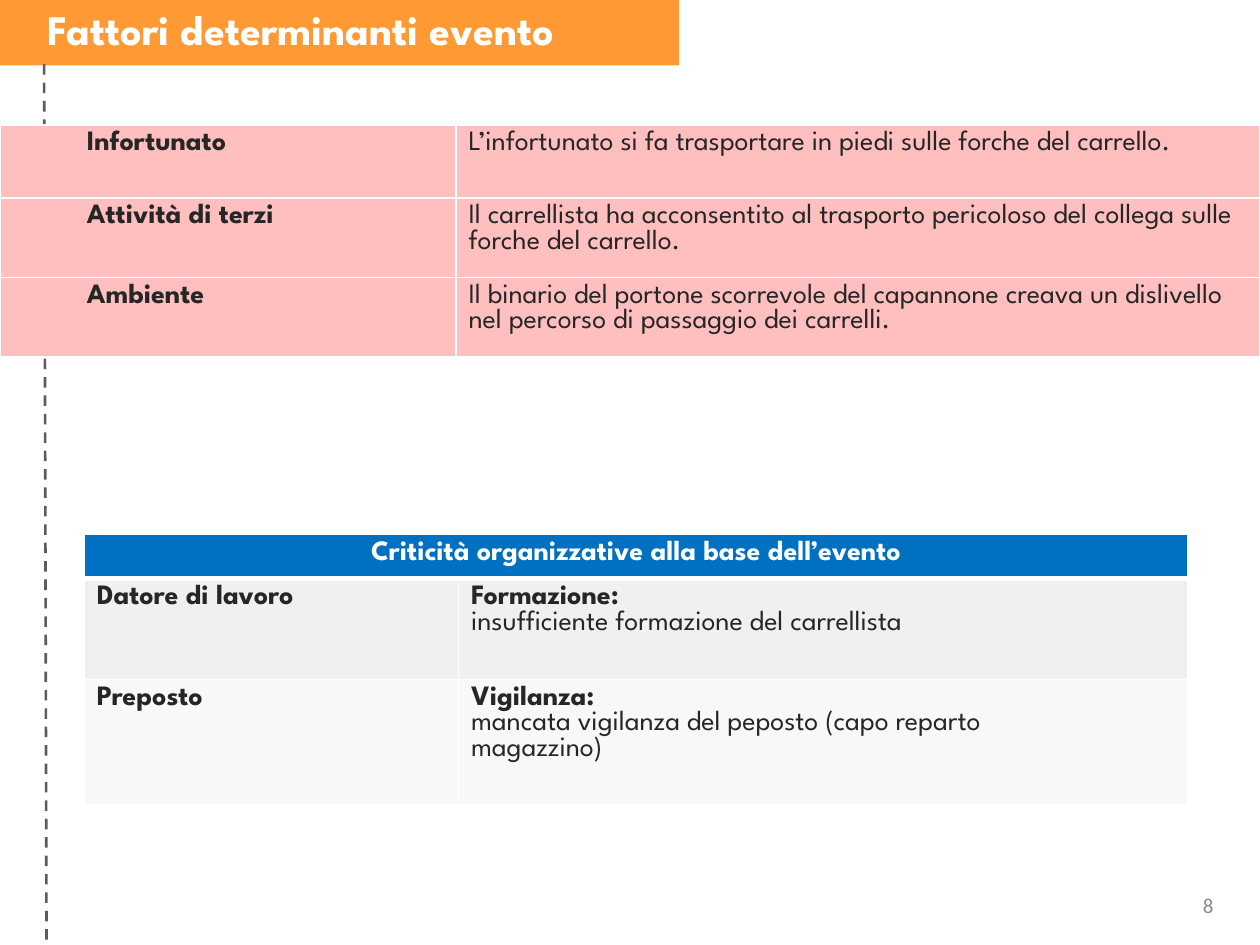
from dataclasses import dataclass

from lxml.etree import SubElement
from pptx import Presentation
from pptx.dml.color import RGBColor
from pptx.enum.dml import MSO_LINE
from pptx.enum.shapes import MSO_CONNECTOR, MSO_SHAPE
from pptx.enum.text import MSO_ANCHOR, MSO_AUTO_SIZE, PP_ALIGN
from pptx.oxml.ns import qn
from pptx.slide import Slide
from pptx.table import Table, _Cell
from pptx.util import Pt

WHITE = RGBColor(0xFF, 0xFF, 0xFF)
ORANGE = RGBColor(0xFF, 0x99, 0x33)
BLUE = RGBColor(0x00, 0x70, 0xC0)
PINK = RGBColor(0xFF, 0xBF, 0xBF)
LIGHT_GREY = RGBColor(0xF0, 0xF0, 0xF0)
PALE_GREY = RGBColor(0xF8, 0xF8, 0xF8)
DASH_GREY = RGBColor(0x5C, 0x5C, 0x5C)
NUMBER_GREY = RGBColor(0x89, 0x89, 0x89)
INK = RGBColor(0x26, 0x26, 0x26)
FONT = "League Spartan"


@dataclass
class Row:
    height: float
    label: str
    text: str
    fill: RGBColor
    heading: str = ""


FACTORS = [
    Row(41.8, "Infortunato",
        "L’infortunato si fa trasportare in piedi sulle forche del carrello.", PINK),
    Row(45.5, "Attività di terzi",
        "Il carrellista ha acconsentito al trasporto pericoloso del collega "
        "sulle forche del carrello.", PINK),
    Row(45.5, "Ambiente",
        "Il binario del portone scorrevole del capannone creava un dislivello "
        "nel percorso di passaggio dei carrelli.", PINK),
]
ISSUES = [
    Row(57.6, "Datore di lavoro", "insufficiente formazione del carrellista",
        LIGHT_GREY, "Formazione:"),
    Row(71.3, "Preposto",
        "mancata vigilanza del peposto (capo reparto\nmagazzino)",
        PALE_GREY, "Vigilanza:"),
]


def format_font(font, size: float, color: RGBColor, bold: bool = False,
                name: str = FONT) -> None:
    font.name, font.size, font.bold = name, Pt(size), bold
    font.color.rgb = color


def set_borders(cell: _Cell, bottom: float = 1, top: float = 1) -> None:
    tc_pr = cell._tc.get_or_add_tcPr()
    for side, width in (("L", 1), ("R", 1), ("T", top), ("B", bottom)):
        ln = SubElement(tc_pr, qn(f"a:ln{side}"), w=str(Pt(width)))
        fill = SubElement(ln, qn("a:solidFill"))
        SubElement(fill, qn("a:srgbClr"), val=str(WHITE))


def fill_cell(cell: _Cell, text: str, fill: RGBColor, bold_lines: int = 0,
              color: RGBColor = INK) -> None:
    """Write the text, with its first bold_lines paragraphs in bold."""
    cell.fill.solid()
    cell.fill.fore_color.rgb = fill
    cell.text_frame.text = text
    for i, p in enumerate(cell.text_frame.paragraphs):
        for r in p.runs:
            format_font(r.font, 16, color, i < bold_lines)


def add_grid(s: Slide, left: float, top: float, widths: list[float],
             heights: list[float]) -> Table:
    table = s.shapes.add_table(len(heights), len(widths), Pt(left), Pt(top),
                               Pt(sum(widths)), Pt(sum(heights))).table
    table.first_row = table.horz_banding = False
    for column, width in zip(table.columns, widths):
        column.width = Pt(width)
    for row, height in zip(table.rows, heights):
        row.height = Pt(height)
    return table


def fill_rows(table: Table, rows: list[Row], first: int = 0,
              label_margin: float = 7.2) -> None:
    for i, row in enumerate(rows, first):
        label, detail = table.cell(i, 0), table.cell(i, 1)
        for cell in (label, detail):
            set_borders(cell, top=3 if first and i == first else 1)
        label.margin_left = Pt(label_margin)
        fill_cell(label, row.label, row.fill, 1)
        text = f"{row.heading}\n{row.text}" if row.heading else row.text
        fill_cell(detail, text, row.fill, 1 if row.heading else 0)


def add_banner(s: Slide) -> None:
    banner = s.shapes.add_shape(MSO_SHAPE.RECTANGLE, Pt(-8.6), Pt(0), Pt(396.7), Pt(37.4))
    banner.shadow.inherit = False
    banner.fill.solid()
    banner.fill.fore_color.rgb = ORANGE
    banner.line.fill.background()

    guide = s.shapes.add_connector(MSO_CONNECTOR.STRAIGHT, Pt(25.2), Pt(36.7),
                                   Pt(26.6), Pt(540))
    guide.line.color.rgb = DASH_GREY
    guide.line.width = Pt(1.5)
    guide.line.dash_style = MSO_LINE.DASH
    SubElement(guide._element.spPr, qn("a:effectLst"))


def add_title(s: Slide) -> None:
    title = s.shapes.title
    s.shapes._spTree.append(title._element)  # in front of the banner
    title.left, title.top, title.width, title.height = Pt(20.2), Pt(-1.4), Pt(563.8), Pt(36)
    tf = title.text_frame
    tf.text = "Fattori determinanti evento"
    tf.word_wrap = True
    tf.auto_size = MSO_AUTO_SIZE.NONE
    tf.vertical_anchor = MSO_ANCHOR.BOTTOM
    p = tf.paragraphs[0]
    p.alignment = PP_ALIGN.LEFT
    format_font(p.runs[0].font, 24, WHITE, True)


def add_page_number(s: Slide) -> None:
    tf = s.shapes.add_textbox(Pt(660.2), Pt(506.2), Pt(40.3), Pt(30.2)).text_frame
    tf.word_wrap = True
    tf.text = "8"
    p = tf.paragraphs[0]
    p.alignment = PP_ALIGN.RIGHT
    format_font(p.runs[0].font, 12, NUMBER_GREY, name="Calibri")


def main() -> None:
    prs = Presentation()
    prs.slide_width, prs.slide_height = Pt(720), Pt(540)
    s = prs.slides.add_slide(prs.slide_layouts[5])
    add_banner(s)
    add_page_number(s)
    add_title(s)

    issues = add_grid(s, 48.2, 305.3, [213.8, 416.9], [25.4] + [r.height for r in ISSUES])
    header = issues.cell(0, 0)
    for cell in (header, issues.cell(0, 1)):
        set_borders(cell, bottom=3)
    header.merge(issues.cell(0, 1))
    fill_cell(header, "Criticità organizzative alla base dell’evento", BLUE, 1, WHITE)
    header.text_frame.paragraphs[0].alignment = PP_ALIGN.CENTER
    fill_rows(issues, ISSUES, first=1)

    factors = add_grid(s, 0, 71.3, [260.6, 459.4], [r.height for r in FACTORS])
    fill_rows(factors, FACTORS, label_margin=49.7)
    prs.save("out.pptx")


if __name__ == "__main__":
    main()
